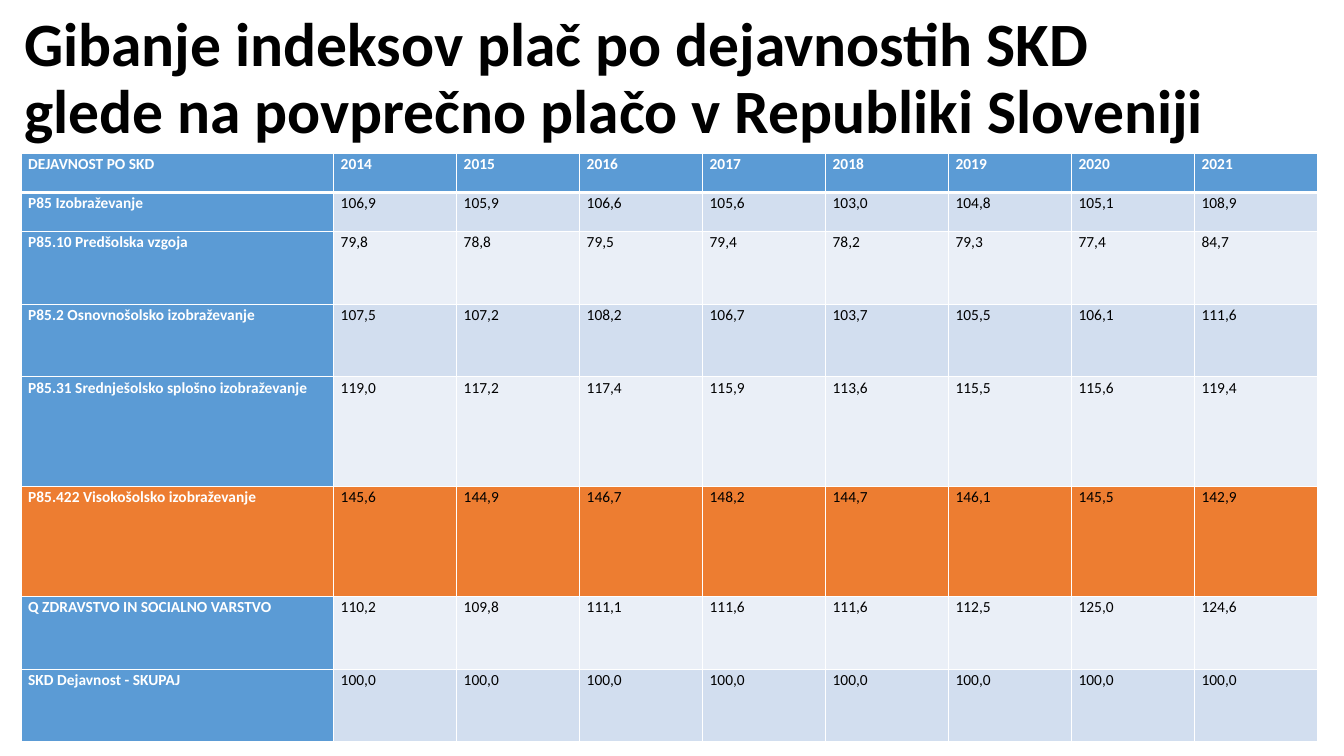
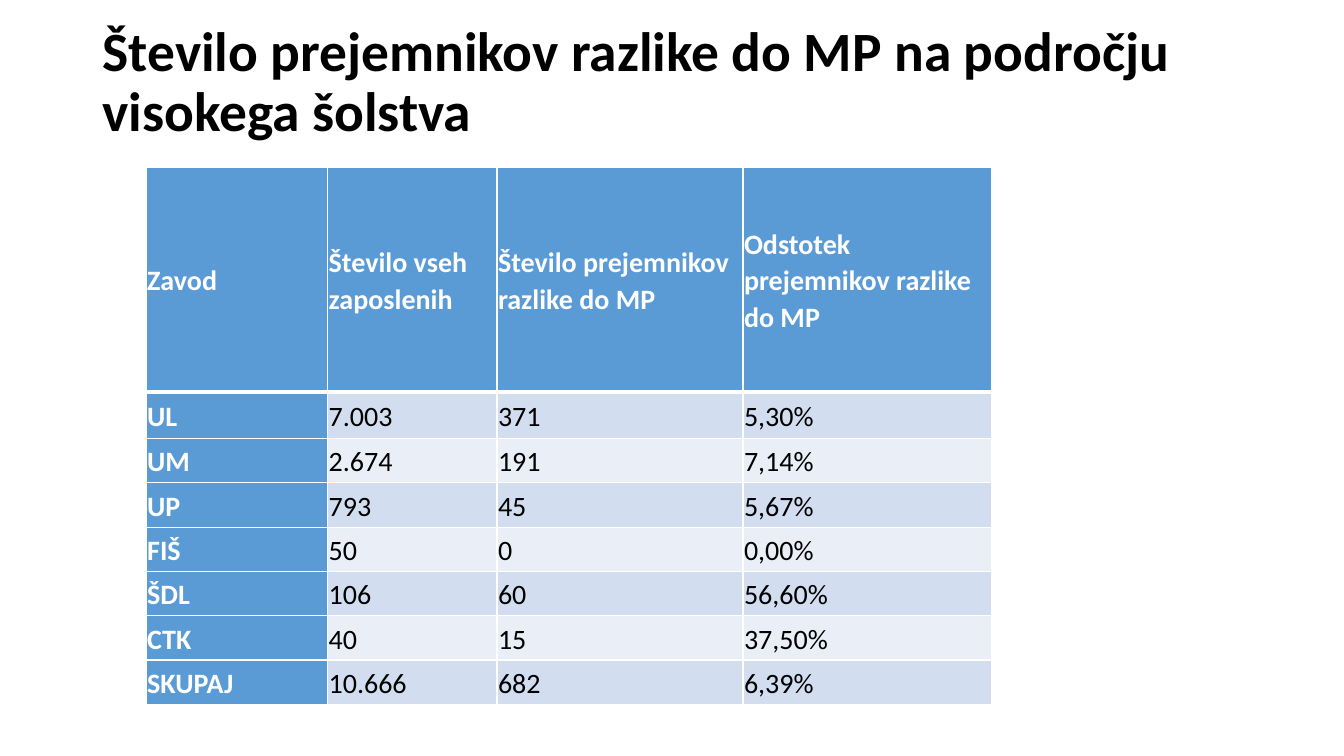
from lxml import etree
from pptx import Presentation
from pptx.dml.color import RGBColor
from pptx.enum import text
from pptx.oxml.ns import qn
from pptx.util import Inches, Pt

FONT = "Calibri"
COLORS = {
    "header": "5B9BD5",
    "band_dark": "D2DEEF",
    "band_light": "EAEFF7",
    "highlight": "ED7D31",
    "white": "FFFFFF",
    "black": "000000",
}

deck = Presentation()
deck.slide_width, deck.slide_height = Inches(13.33), Inches(7.5)


def add_titled_slide(title, left, top, width, size):
    slide = deck.slides.add_slide(deck.slide_layouts[6])
    frame = slide.shapes.add_textbox(
        Inches(left), Inches(top), Inches(width), Inches(1.45)).text_frame
    frame.word_wrap = True
    frame.vertical_anchor = text.MSO_ANCHOR.MIDDLE
    heading = frame.paragraphs[0]
    heading.text = title
    heading.line_spacing = 0.9
    heading.font.name, heading.font.size, heading.font.bold = FONT, Pt(size), True
    heading.font.color.rgb = RGBColor.from_string(COLORS["black"])
    return slide


def add_banded_table(slide, left, top, columns, heights, rows, size, margins,
                     anchor, space_after=0, highlight=None):
    table = slide.shapes.add_table(
        len(rows), len(columns), Inches(left), Inches(top),
        Inches(sum(columns)), Inches(sum(heights))).table
    table.first_col = True
    for column, width in zip(table.columns, columns):
        column.width = Inches(width)
    for r, values in enumerate(rows):
        table.rows[r].height = Inches(heights[r])
        for c, value in enumerate(values):
            cell = table.cell(r, c)
            is_header = r == 0 or c == 0
            # White grid, thicker under the header row
            for side in "LRTB":
                thick = (r, side) in ((0, "B"), (1, "T"))
                line = etree.SubElement(cell._tc.get_or_add_tcPr(), qn("a:ln" + side),
                                        w=str(Pt(3 if thick else 1)))
                paint = etree.SubElement(line, qn("a:solidFill"))
                etree.SubElement(paint, qn("a:srgbClr"), val=COLORS["white"])
            # Fill
            if r == highlight:
                fill = "highlight"
            elif is_header:
                fill = "header"
            else:
                fill = "band_dark" if r % 2 else "band_light"
            cell.fill.solid()
            cell.fill.fore_color.rgb = RGBColor.from_string(COLORS[fill])
            # Text
            (cell.margin_left, cell.margin_top,
             cell.margin_right, cell.margin_bottom) = map(Inches, margins)
            cell.vertical_anchor = anchor
            entry = cell.text_frame.paragraphs[0]
            entry.text = value
            entry.line_spacing = 1.07
            entry.space_after = Pt(space_after)
            entry.font.name, entry.font.size, entry.font.bold = FONT, Pt(size), is_header
            entry.font.color.rgb = RGBColor.from_string(
                COLORS["white" if is_header else "black"])


# Slide 1: wage indices by activity
wage_indices = [
    ["DEJAVNOST PO SKD"] + [str(year) for year in range(2014, 2022)],
    ["P85 Izobraževanje",
     "106,9", "105,9", "106,6", "105,6", "103,0", "104,8", "105,1", "108,9"],
    ["P85.10 Predšolska vzgoja",
     "79,8", "78,8", "79,5", "79,4", "78,2", "79,3", "77,4", "84,7"],
    ["P85.2 Osnovnošolsko izobraževanje",
     "107,5", "107,2", "108,2", "106,7", "103,7", "105,5", "106,1", "111,6"],
    ["P85.31 Srednješolsko splošno izobraževanje",
     "119,0", "117,2", "117,4", "115,9", "113,6", "115,5", "115,6", "119,4"],
    ["P85.422 Visokošolsko izobraževanje",
     "145,6", "144,9", "146,7", "148,2", "144,7", "146,1", "145,5", "142,9"],
    ["Q ZDRAVSTVO IN SOCIALNO VARSTVO",
     "110,2", "109,8", "111,1", "111,6", "111,6", "112,5", "125,0", "124,6"],
    ["SKD Dejavnost - SKUPAJ"] + ["100,0"] * 8,
]
indices_slide = add_titled_slide(
    "Gibanje indeksov plač po dejavnostih SKD glede na povprečno plačo v Republiki Sloveniji",
    0.14, 0.07, 12.13, 44)
add_banded_table(
    indices_slide, 0.21, 1.52, [3.1] + [1.22] * 8,
    [0.39, 0.39, 0.72, 0.72, 1.09, 1.09, 0.72, 0.72], wage_indices,
    size=11, margins=(0.07, 0, 0.07, 0), anchor=text.MSO_ANCHOR.TOP, highlight=5)

# Slide 2: recipients of the minimum wage supplement
recipients = [
    ["Zavod", "Število vseh zaposlenih", "Število prejemnikov razlike do MP",
     "Odstotek prejemnikov razlike do MP"],
    ["UL", "7.003", "371", "5,30%"],
    ["UM", "2.674", "191", "7,14%"],
    ["UP", "793", "45", "5,67%"],
    ["FIŠ", "50", "0", "0,00%"],
    ["ŠDL", "106", "60", "56,60%"],
    ["CTK", "40", "15", "37,50%"],
    ["SKUPAJ", "10.666", "682", "6,39%"],
]
recipients_slide = add_titled_slide(
    "Število prejemnikov razlike do MP na področju visokega šolstva",
    0.92, 0.1, 11.5, 39.6)
add_banded_table(
    recipients_slide, 1.45, 1.66, [1.8, 1.68, 2.44, 2.47],
    [2.23, 0.46] + [0.44] * 6, recipients,
    size=20, margins=(0.01, 0.01, 0.01, 0), anchor=text.MSO_ANCHOR.MIDDLE, space_after=8)

deck.save("out.pptx")
